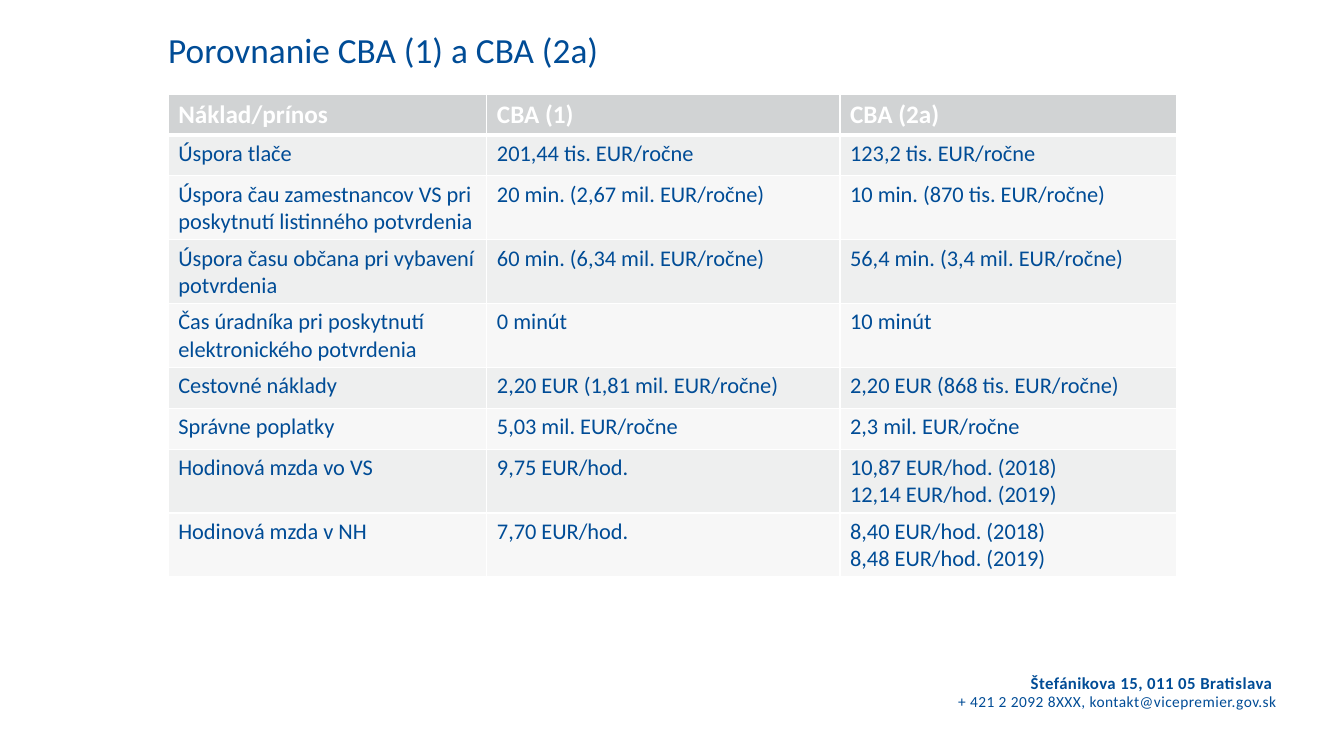
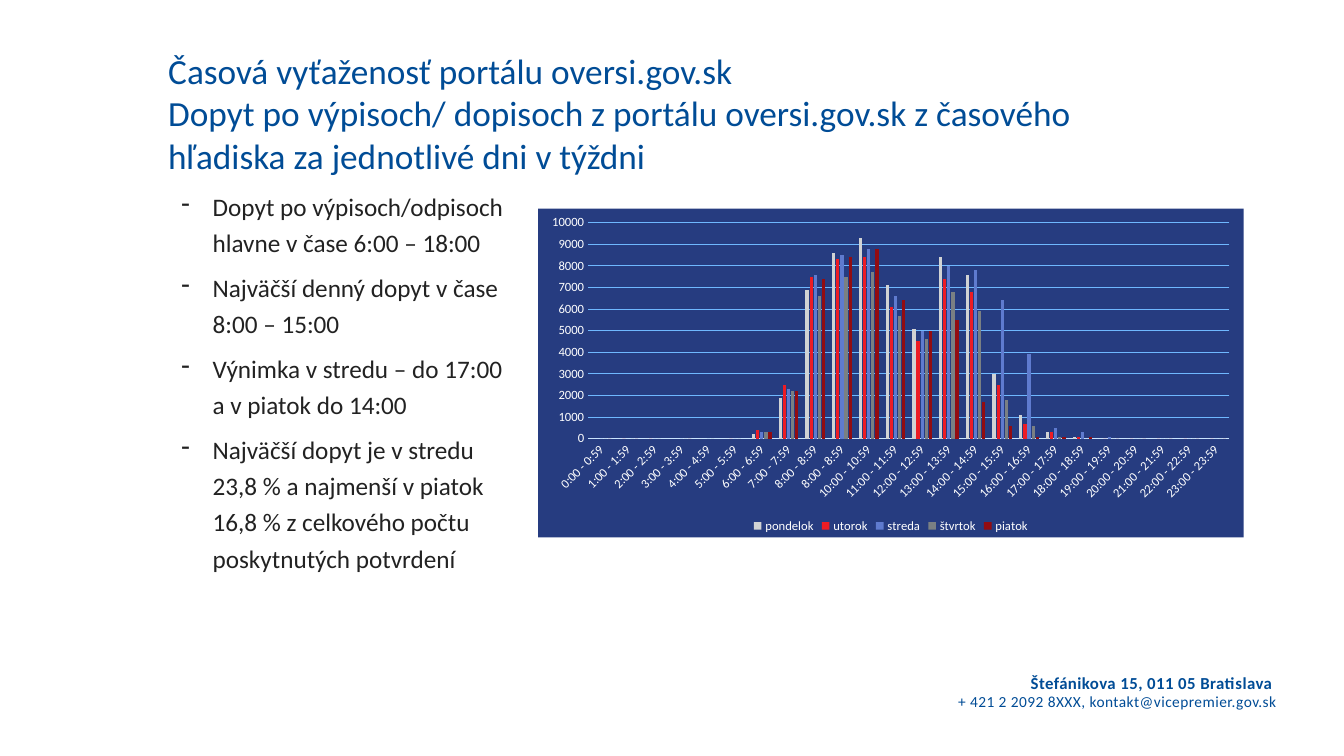
from lxml.etree import SubElement
from pptx import Presentation
from pptx.chart.data import CategoryChartData
from pptx.dml.color import RGBColor
from pptx.enum.chart import XL_CHART_TYPE, XL_LEGEND_POSITION, XL_TICK_MARK
from pptx.enum.text import MSO_ANCHOR, PP_ALIGN
from pptx.oxml import parse_xml
from pptx.oxml.ns import nsdecls, qn
from pptx.util import Cm, Pt

FONT = "Calibri"
BLUE = RGBColor(0x00, 0x4C, 0x96)
DARK = RGBColor(0x22, 0x22, 0x22)
WHITE = RGBColor(0xFF, 0xFF, 0xFF)
HEADER_GREY = RGBColor(0xD1, 0xD3, 0xD4)
BAND_DARK = RGBColor(0xEE, 0xEF, 0xEF)
BAND_LIGHT = RGBColor(0xF7, 0xF7, 0xF7)
NAVY = RGBColor(0x26, 0x3C, 0x80)
AXIS_BLUE = RGBColor(0xC9, 0xE4, 0xFF)
GRID_BLUE = RGBColor(0x6F, 0xB8, 0xFF)
RED = RGBColor(0xED, 0x1C, 0x24)
SKY = RGBColor(0x5F, 0x7B, 0xCF)
STONE = RGBColor(0x7A, 0x80, 0x83)
MAROON = RGBColor(0x93, 0x0C, 0x11)

LEFT, WIDTH = Cm(4.24), Cm(25.4)

COST_ROWS = [
    ("Náklad/prínos", "CBA (1)", "CBA (2a)"),
    ("Úspora tlače", "201,44 tis. EUR/ročne", "123,2 tis. EUR/ročne"),
    ("Úspora čau zamestnancov VS pri poskytnutí listinného potvrdenia",
     "20 min. (2,67 mil. EUR/ročne)", "10 min. (870 tis. EUR/ročne)"),
    ("Úspora času občana pri vybavení potvrdenia",
     "60 min. (6,34 mil. EUR/ročne)", "56,4 min. (3,4 mil. EUR/ročne)"),
    ("Čas úradníka pri poskytnutí elektronického potvrdenia", "0 minút", "10 minút"),
    ("Cestovné náklady", "2,20 EUR (1,81 mil. EUR/ročne)", "2,20 EUR (868 tis. EUR/ročne)"),
    ("Správne poplatky", "5,03 mil. EUR/ročne", "2,3 mil. EUR/ročne"),
    ("Hodinová mzda vo VS", "9,75 EUR/hod.", "10,87 EUR/hod. (2018)\n12,14 EUR/hod. (2019)"),
    ("Hodinová mzda v NH", "7,70 EUR/hod.", "8,40 EUR/hod. (2018)\n8,48 EUR/hod. (2019)"),
]

DEMAND_POINTS = [
    "Dopyt po výpisoch/odpisoch hlavne v čase 6:00 – 18:00",
    "Najväčší denný dopyt v čase 8:00 – 15:00",
    "Výnimka v stredu – do 17:00 a v piatok do 14:00",
    "Najväčší dopyt je v stredu 23,8 % a najmenší v piatok 16,8 % "
    "z celkového počtu poskytnutých potvrdení",
]

HOURS = [*range(9), 8, *range(10, 24)]
DAYS = [
    ("pondelok", HEADER_GREY,
     [0, 0, 0, None, 0, 0, 200, 1900, 6900, 8600, 9300, 7100,
      5100, 8400, 7600, 3000, 1100, 300, 100, 0, 0, 0, 0, 0]),
    ("utorok", RED,
     [None, 0, 0, None, None, 0, 400, 2500, 7500, 8300, 8400, 6100,
      4500, 7400, 6800, 2500, 700, 300, 100, 0, 0, 0, 0, 0]),
    ("streda", SKY,
     [0, None, 0, 0, 0, 0, 300, 2300, 7600, 8500, 8800, 6600,
      5000, 8000, 7800, 6400, 3900, 500, 300, 100, 0, 0, 0, 0]),
    ("štvrtok", STONE,
     [0, 0, 0, 0, 0, 0, 300, 2200, 6600, 7500, 7700, 5700,
      4600, 6800, 5900, 1800, 600, 100, 0, 0, 0, 0, 0, 0]),
    ("piatok", MAROON,
     [0, 0, None, 0, None, None, 300, 2200, 7400, 8400, 8800, 6400,
      5000, 5500, 1700, 600, 100, 100, 100, 0, 0, 0, 0, 0]),
]


def style_font(font, size, color, bold=False):
    """Set the typeface, size, colour and weight of a font."""
    font.name = FONT
    font.size = Pt(size)
    font.color.rgb = color
    font.bold = bold


def add_span(para, text, size, color, bold=False):
    """Append one styled run to a paragraph."""
    span = para.add_run()
    span.text = text
    style_font(span.font, size, color, bold)
    return span


def paragraphs_for(frame, texts):
    """Yield a paragraph of the frame together with each text."""
    for index, text in enumerate(texts):
        yield (frame.add_paragraph() if index else frame.paragraphs[0]), text


def add_box(page, left, top, width, height, inset=0):
    """Add a wrapping text box and return its frame."""
    frame = page.shapes.add_textbox(left, top, width, height).text_frame
    frame.word_wrap = True
    frame.margin_left = frame.margin_right = inset
    frame.margin_top = frame.margin_bottom = 0
    return frame


def add_footer(page):
    """Add the right-aligned contact lines."""
    frame = add_box(page, Cm(19.23), Cm(16.93), Cm(13.2), Cm(1), Cm(0.25))
    frame.vertical_anchor = MSO_ANCHOR.MIDDLE
    lines = [("Štefánikova 15, 011 05 Bratislava ", 12, True),
             ("+ 421 2 2092 8XXX, kontakt@vicepremier.gov.sk", 11, False)]
    for para, (text, size, bold) in paragraphs_for(frame, lines):
        para.alignment = PP_ALIGN.RIGHT
        span = add_span(para, text, size, BLUE, bold)
        span.font._element.set("spc", "30")


def add_page(deck, title_top, title_lines):
    """Add a blank page with its title and footer."""
    page = deck.slides.add_slide(deck.slide_layouts[6])
    add_footer(page)
    frame = add_box(page, LEFT, title_top, WIDTH, Cm(2.08))
    for para, text in paragraphs_for(frame, title_lines):
        add_span(para, text, 25.2, BLUE)
    return page


def set_borders(cell, bottom_width):
    """Draw white borders around a table cell."""
    properties = cell._tc.get_or_add_tcPr()
    widths = {"a:lnL": 1, "a:lnR": 1, "a:lnT": 1, "a:lnB": bottom_width}
    for position, (tag, width) in enumerate(widths.items()):
        line = properties.makeelement(qn(tag), {"w": str(Pt(width))})
        fill = SubElement(line, qn("a:solidFill"))
        SubElement(fill, qn("a:srgbClr"), val=str(WHITE))
        properties.insert(position, line)


def add_cost_table(page, rows):
    """Add the comparison table with a header and banded rows."""
    row_height = Cm(1.03)
    table = page.shapes.add_table(len(rows), len(rows[0]), LEFT, Cm(2.37),
                                  WIDTH, row_height * len(rows)).table
    for column, width in zip(table.columns, (8.03, 8.9, 8.47)):
        column.width = Cm(width)
    for row_index, texts in enumerate(rows):
        header = row_index == 0
        band = BAND_DARK if row_index % 2 else BAND_LIGHT
        table.rows[row_index].height = row_height
        for column_index, text in enumerate(texts):
            cell = table.cell(row_index, column_index)
            cell.fill.solid()
            cell.fill.fore_color.rgb = HEADER_GREY if header else band
            set_borders(cell, 3 if header else 1)
            for para, line in paragraphs_for(cell.text_frame, text.split("\n")):
                add_span(para, line, 18 if header else 16, WHITE if header else BLUE, header)


def add_dash_list(page, points):
    """Add the list of points with hanging dashes."""
    frame = add_box(page, Cm(3.3), Cm(4.67), Cm(9.5), Cm(10.62))
    for para, text in paragraphs_for(frame, points):
        properties = para._p.get_or_add_pPr()
        properties.set("marL", str(Cm(2.06)))
        properties.set("indent", str(-Cm(0.79)))
        SubElement(properties, qn("a:buChar"), char="-")
        para.line_spacing = 1.2
        if text != points[0]:
            para.space_before = Pt(6)
        add_span(para, text, 18, DARK)


def style_axis(axis):
    """Set the parts that both chart axes share."""
    axis.major_tick_mark = axis.minor_tick_mark = XL_TICK_MARK.NONE
    style_font(axis.tick_labels.font, 9, WHITE)


def style_line(line, color):
    """Give a chart line its colour and thin width."""
    line.color.rgb = color
    line.width = Pt(0.75)


def add_demand_chart(page):
    """Add the clustered columns of demand by hour and weekday."""
    data = CategoryChartData()
    data.categories = [f"{hour}:00 - {hour}:59" for hour in HOURS]
    for name, _, values in DAYS:
        data.add_series(name, values)
    chart = page.shapes.add_chart(XL_CHART_TYPE.COLUMN_CLUSTERED, Cm(13.56), Cm(5.26),
                                  Cm(17.78), Cm(8.28), data).chart
    chart.has_title = False
    style_font(chart.font, 10, WHITE)
    background = parse_xml(
        f'<c:spPr {nsdecls("c", "a")}><a:solidFill><a:srgbClr val="{NAVY}"/></a:solidFill>'
        '<a:ln><a:noFill/></a:ln></c:spPr>')
    chart._chartSpace.find(qn("c:chart")).addnext(background)

    plot = chart.plots[0]
    plot.gap_width, plot.overlap = 219, -27
    plot.vary_by_categories = False
    for series, (_, color, _) in zip(plot.series, DAYS):
        series.format.fill.solid()
        series.format.fill.fore_color.rgb = color
        series.invert_if_negative = False

    hours, demand = chart.category_axis, chart.value_axis
    style_axis(hours)
    style_line(hours.format.line, AXIS_BLUE)
    hours._element.find(qn("c:txPr")).find(qn("a:bodyPr")).set("rot", "-2700000")
    style_axis(demand)
    demand.format.line.fill.background()
    demand.minimum_scale, demand.maximum_scale, demand.major_unit = 0, 10000, 1000
    style_line(demand.major_gridlines.format.line, GRID_BLUE)

    chart.has_legend = True
    chart.legend.position = XL_LEGEND_POSITION.BOTTOM
    chart.legend.include_in_layout = False
    style_font(chart.legend.font, 9, WHITE)


def main():
    """Build both pages and save the deck."""
    deck = Presentation()
    deck.slide_width, deck.slide_height = Cm(33.87), Cm(19.05)

    comparison = add_page(deck, Cm(0.71), ["Porovnanie CBA (1) a CBA (2a)"])
    add_cost_table(comparison, COST_ROWS)

    demand = add_page(deck, Cm(1.24), [
        "Časová vyťaženosť portálu oversi.gov.sk",
        "Dopyt po výpisoch/ dopisoch z portálu oversi.gov.sk z časového "
        "hľadiska za jednotlivé dni v týždni",
    ])
    add_dash_list(demand, DEMAND_POINTS)
    add_demand_chart(demand)

    deck.save("out.pptx")


if __name__ == "__main__":
    main()
